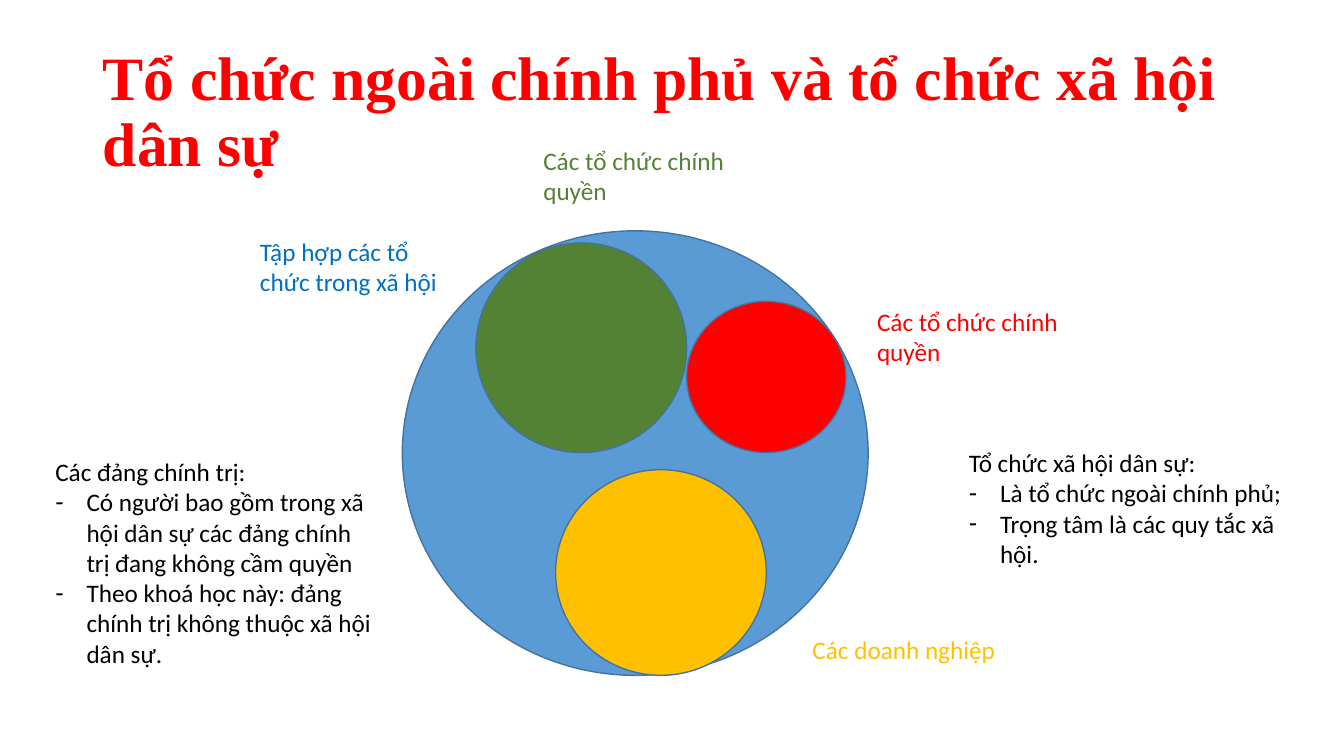
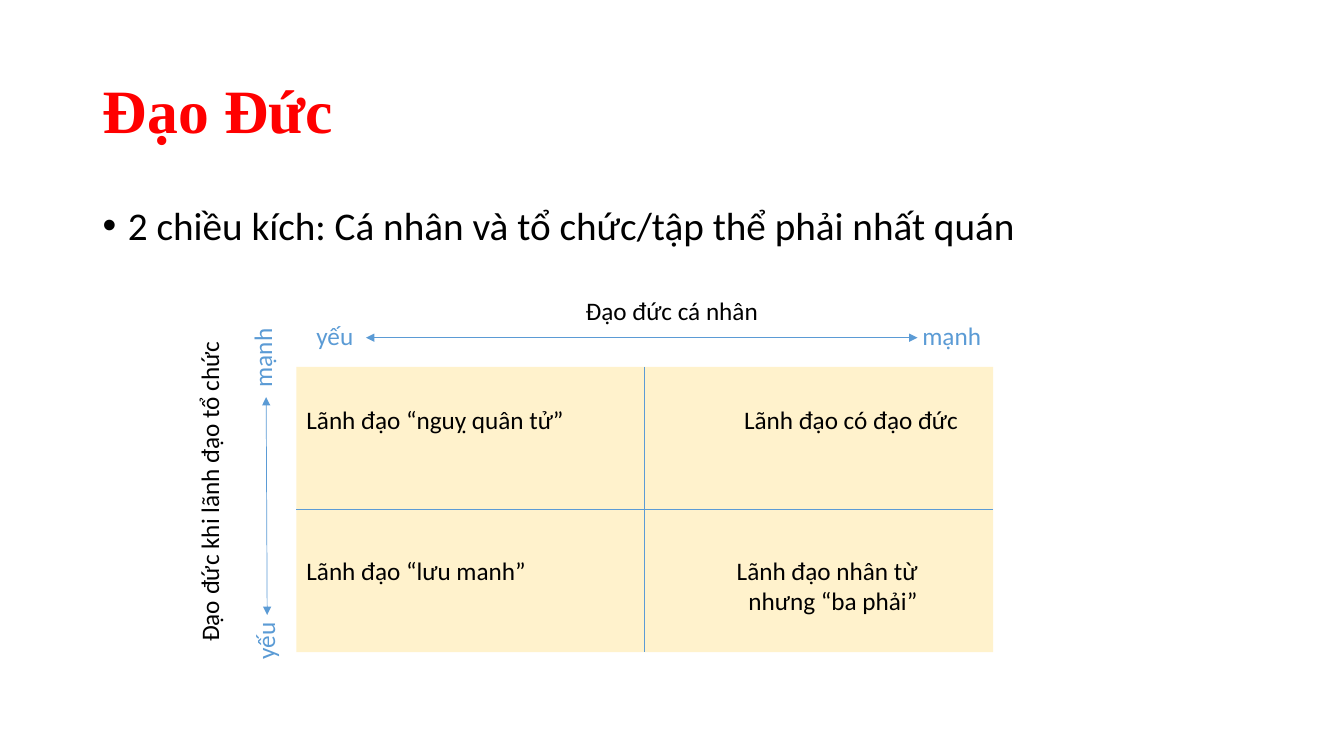
from dataclasses import dataclass

from lxml.etree import SubElement
from pptx import Presentation
from pptx.dml.color import RGBColor
from pptx.enum.shapes import MSO_CONNECTOR as Conn, MSO_SHAPE as Shape
from pptx.enum.text import MSO_ANCHOR as Anchor, MSO_AUTO_SIZE as AutoSize, PP_ALIGN as Align
from pptx.oxml.ns import qn
from pptx.util import Pt

PX = 9144


@dataclass(frozen=True)
class Theme:
    red: str = "FF0000"
    blue: str = "5B9BD5"
    label_blue: str = "0070C0"
    outline: str = "43739E"
    green: str = "548235"
    gold: str = "FFC000"
    cream: str = "FFF2CC"
    black: str = "000000"
    title_font: str = "Times New Roman"
    body_font: str = "Calibri"
    title_size: int = 44
    lead_size: int = 28
    text_size: int = 18


@dataclass(frozen=True)
class Box:
    x: int
    y: int
    w: int
    h: int

    def emu(self) -> tuple[int, ...]:
        return tuple(v * PX for v in (self.x, self.y, self.w, self.h))


@dataclass(frozen=True)
class Circle:
    box: Box
    color: str


@dataclass(frozen=True)
class Label:
    box: Box
    text: str
    color: str = Theme.black
    align: Align = Align.LEFT
    rotation: int = 0


@dataclass(frozen=True)
class Note:
    box: Box
    heading: str
    points: tuple[str, ...]


@dataclass(frozen=True)
class Line:
    x1: int
    y1: int
    x2: int
    y2: int
    arrows: bool = False


T = Theme()
TITLE_BOX = Box(92, 40, 1150, 145)
LEAD_BOX = Box(92, 200, 1150, 60)
GRID = Box(294, 364, 691, 283)
MID_X = GRID.x + GRID.w // 2
MID_Y = GRID.y + GRID.h // 2

CIRCLES = (
    Circle(Box(399, 229, 462, 441), T.blue),
    Circle(Box(681, 299, 158, 150), T.red),
    Circle(Box(551, 466, 209, 204), T.gold),
    Circle(Box(472, 241, 209, 208), T.green),
)
CIRCLE_LABELS = (
    Label(Box(248, 229, 201, 71), "Tập hợp các tổ chức trong xã hội", T.label_blue),
    Label(Box(860, 299, 201, 71), "Các tổ chức chính quyền", T.red),
    Label(Box(796, 624, 201, 71), "Các doanh nghiệp", T.gold),
    Label(Box(529, 139, 201, 71), "Các tổ chức chính quyền", T.green),
)
NOTES = (
    Note(Box(45, 448, 338, 222), "Các đảng chính trị:", (
        "Có người bao gồm trong xã hội dân sự các đảng chính trị đang không cầm quyền",
        "Theo khoá học này: đảng chính trị không thuộc xã hội dân sự.",
    )),
    Note(Box(951, 439, 338, 131), "Tổ chức xã hội dân sự:", (
        "Là tổ chức ngoài chính phủ;",
        "Trọng tâm là các quy tắc xã hội.",
    )),
)
AXIS_LABELS = (
    Label(Box(32, 451, 351, 40), "Đạo đức khi lãnh đạo tổ chức", rotation=270),
    Label(Box(571, 288, 192, 40), "Đạo đức cá nhân"),
    Label(Box(905, 313, 80, 40), "mạnh", T.blue),
    Label(Box(304, 313, 80, 40), "yếu", T.blue),
    Label(Box(220, 334, 80, 40), "mạnh", T.blue, rotation=270),
    Label(Box(223, 604, 80, 40), "yếu", T.blue, rotation=270),
)
QUADRANTS = (
    Label(Box(GRID.x, 396, 345, 40), "Lãnh đạo “nguỵ quân tử”"),
    Label(Box(MID_X, 396, 321, 40), "Lãnh đạo có đạo đức", align=Align.RIGHT),
    Label(Box(GRID.x, 546, 345, 40), "Lãnh đạo “lưu manh”"),
    Label(Box(MID_X, 546, 281, 70), "Lãnh đạo nhân từ\nnhưng “ba phải”", align=Align.RIGHT),
)
LINES = (
    Line(363, 335, 910, 335, arrows=True),
    Line(265, 610, 264, 394, arrows=True),
    Line(MID_X, GRID.y, MID_X, GRID.y + GRID.h),
    Line(GRID.x, MID_Y, GRID.x + GRID.w, MID_Y),
)


def write(p, text: str, *, size: int = T.text_size, color: str = T.black,
          font: str = T.body_font, bold: bool = False, align: Align = Align.LEFT,
          spacing: float = 1.0, bullet: str = "", indent: int = 0) -> None:
    p.alignment = align
    p.line_spacing = spacing
    r = p.add_run()
    r.text = text
    r.font.size = Pt(size)
    r.font.name = font
    r.font.bold = bold
    r.font.color.rgb = RGBColor.from_string(color)
    if bullet:
        ppr = p._p.get_or_add_pPr()
        ppr.set("marL", str(indent * PX))
        ppr.set("indent", str(-indent * PX))
        SubElement(ppr, qn("a:buFont")).set("typeface", "Arial")
        SubElement(ppr, qn("a:buChar")).set("char", bullet)


def add_box(s, box: Box, rotation: int = 0):
    sp = s.shapes.add_textbox(*box.emu())
    sp.rotation = rotation
    sp.text_frame.word_wrap = True
    return sp.text_frame


def add_label(s, label: Label) -> None:
    tf = add_box(s, label.box, label.rotation)
    for i, text in enumerate(label.text.split("\n")):
        p = tf.add_paragraph() if i else tf.paragraphs[0]
        write(p, text, color=label.color, align=label.align)


def add_note(s, note: Note) -> None:
    tf = add_box(s, note.box)
    write(tf.paragraphs[0], note.heading)
    for point in note.points:
        write(tf.add_paragraph(), point, bullet="-", indent=31)


def add_filled(s, kind: Shape, box: Box, fill: str, outline: str = "") -> None:
    sp = s.shapes.add_shape(kind, *box.emu())
    sp.shadow.inherit = False
    sp.fill.solid()
    sp.fill.fore_color.rgb = RGBColor.from_string(fill)
    if outline:
        sp.line.color.rgb = RGBColor.from_string(outline)
        sp.line.width = Pt(1)
    else:
        sp.line.fill.background()


def add_line(s, line: Line) -> None:
    ends = (v * PX for v in (line.x1, line.y1, line.x2, line.y2))
    cx = s.shapes.add_connector(Conn.STRAIGHT, *ends)
    cx.line.color.rgb = RGBColor.from_string(T.blue)
    cx.line.width = Pt(0.5)
    if line.arrows:
        for end in ("a:headEnd", "a:tailEnd"):
            SubElement(cx.line._get_or_add_ln(), qn(end)).set("type", "triangle")
    SubElement(cx._element.spPr, qn("a:effectLst"))


def add_slide(prs, title: str):
    s = prs.slides.add_slide(prs.slide_layouts[5])
    sp = s.shapes.title
    sp.left, sp.top, sp.width, sp.height = TITLE_BOX.emu()
    tf = sp.text_frame
    tf.word_wrap = True
    tf.auto_size = AutoSize.NONE
    tf.vertical_anchor = Anchor.MIDDLE
    write(tf.paragraphs[0], title, size=T.title_size, color=T.red,
          font=T.title_font, bold=True, spacing=0.9)
    return s


def build_society(prs) -> None:
    s = add_slide(prs, "Tổ chức ngoài chính phủ và tổ chức xã hội dân sự")
    for circle in CIRCLES:
        add_filled(s, Shape.OVAL, circle.box, circle.color, T.outline)
    for label in CIRCLE_LABELS:
        add_label(s, label)
    for note in NOTES:
        add_note(s, note)


def build_ethics(prs) -> None:
    s = add_slide(prs, "Đạo Đức")
    write(add_box(s, LEAD_BOX).paragraphs[0],
          "2 chiều kích: Cá nhân và tổ chức/tập thể phải nhất quán",
          size=T.lead_size, spacing=0.9, bullet="•", indent=25)
    add_filled(s, Shape.RECTANGLE, GRID, T.cream)
    for line in LINES:
        add_line(s, line)
    for label in AXIS_LABELS + QUADRANTS:
        add_label(s, label)


def main() -> None:
    prs = Presentation()
    prs.slide_width, prs.slide_height = 1333 * PX, 750 * PX
    build_society(prs)
    build_ethics(prs)
    prs.save("out.pptx")


if __name__ == "__main__":
    main()
